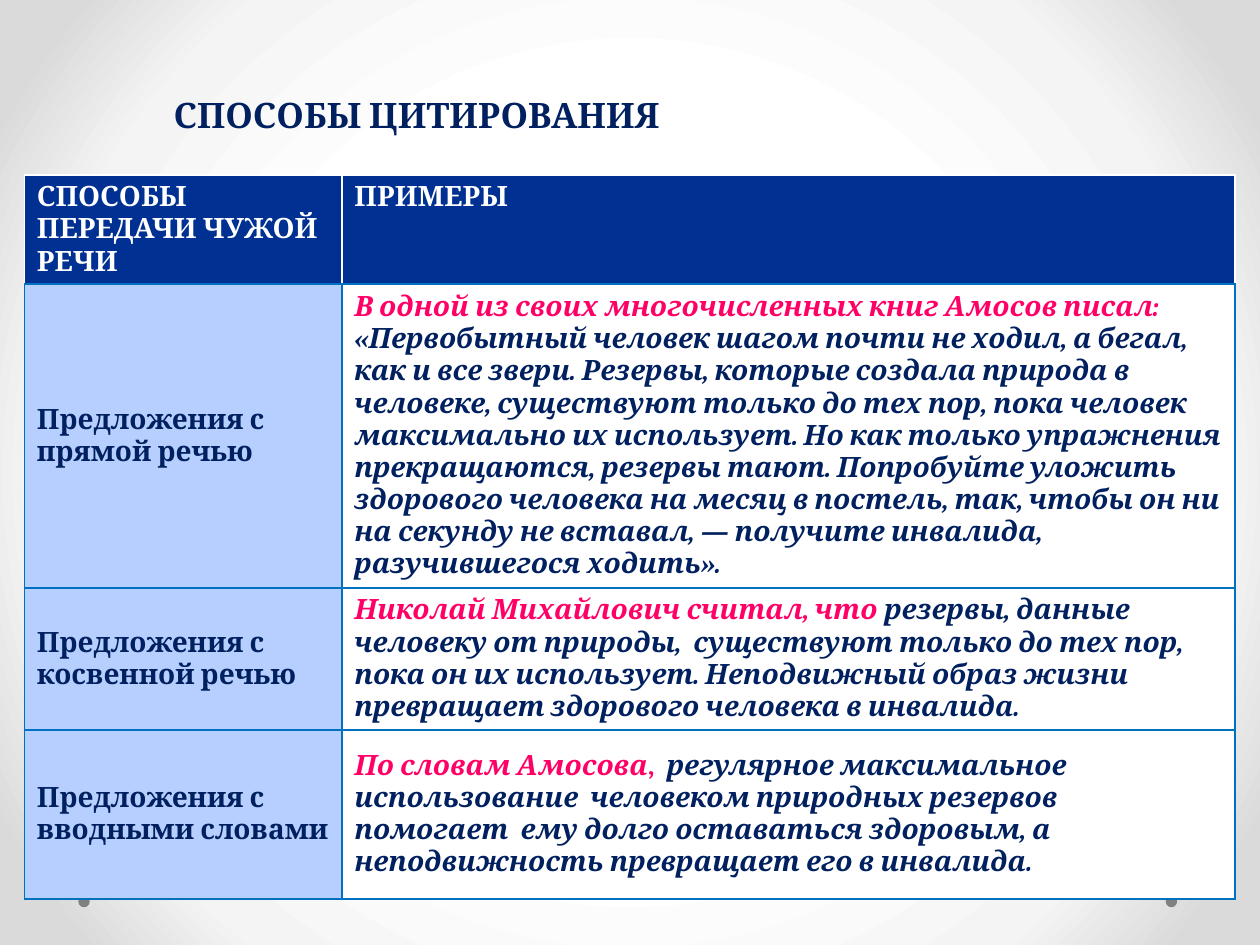
from dataclasses import dataclass

from lxml import etree
from pptx import Presentation
from pptx.dml.color import RGBColor
from pptx.enum.shapes import MSO_SHAPE
from pptx.enum.text import MSO_ANCHOR
from pptx.oxml.ns import qn
from pptx.util import Cm, Pt

OVAL = MSO_SHAPE.OVAL
TOP, MIDDLE = MSO_ANCHOR.TOP, MSO_ANCHOR.MIDDLE


@dataclass(frozen=True)
class Theme:
    font: str = "Cambria"
    title: int = 20
    body: int = 16
    line: int = 1
    navy: str = "002060"
    pink: str = "FF0066"
    white: str = "FFFFFF"
    head: str = "003192"
    side: str = "B7CFFF"
    rule: str = "0070C0"
    dot: str = "808080"
    glow: tuple = ((50, "FFFFFF"), (76, "F4F4F4"), (92, "DADADA"))


THEME = Theme()
COLS = (6.4, 18.01)
ROWS = (2.2, 6.12, 2.87, 3.4)
HEADS = ("СПОСОБЫ ПЕРЕДАЧИ ЧУЖОЙ РЕЧИ", "ПРИМЕРЫ")
PINK = {"color": THEME.pink, "italic": True}
NAVY = {"color": THEME.navy, "italic": True}
BODY = (
    ("Предложения с прямой речью", (
        ("В одной из своих многочисленных книг Амосов писал: ", PINK),
        ("«Первобытный человек шагом почти не ходил, а бегал, как и все звери. "
         "Резервы, которые создала природа в человеке, существуют только до тех "
         "пор, пока человек максимально их использует. Но как только упражнения "
         "прекращаются, резервы тают. Попробуйте уложить здорового человека на "
         "месяц в постель, так, чтобы он ни на секунду не вставал, — получите "
         "инвалида, разучившегося ходить».", NAVY))),
    ("Предложения с косвенной речью", (
        ("Николай Михайлович считал, что ", PINK),
        ("резервы, данные человеку от природы,  существуют только до тех пор, "
         "пока он их использует. Неподвижный образ жизни превращает здорового "
         "человека в инвалида.", NAVY))),
    ("Предложения с вводными словами", (
        ("По словам Амосова", PINK),
        (",  ", {"color": THEME.pink}),
        ("регулярное максимальное  использование  человеком природных резервов  "
         "помогает  ему долго оставаться здоровым, а неподвижность превращает "
         "его в инвалида.", NAVY))),
)


def paint(fill, color):
    fill.solid()
    fill.fore_color.rgb = RGBColor.from_string(color)


def add_text(para, text, size=THEME.body, color=THEME.navy, italic=False):
    run = para.add_run()
    run.text = text
    font = run.font
    font.name, font.size = THEME.font, Pt(size)
    font.bold, font.italic = True, italic
    font.color.rgb = RGBColor.from_string(color)


def add_node(parent, tag, **attrs):
    return etree.SubElement(parent, qn(tag), attrs)


def set_glow(slide):
    """Fill the background with a round gradient from the centre."""
    fill = slide.background.fill
    fill.gradient()
    grad = slide.element.find(".//" + qn("a:gradFill"))
    for node in list(grad):
        grad.remove(node)
    stops = add_node(grad, "a:gsLst")
    for pos, color in THEME.glow:
        stop = add_node(stops, "a:gs", pos=str(pos * 1000))
        add_node(stop, "a:srgbClr", val=color)
    shade = add_node(grad, "a:path", path="circle")
    add_node(shade, "a:fillToRect", **dict.fromkeys("ltrb", "50000"))


def add_dot(slide, left):
    dot = slide.shapes.add_shape(OVAL, Cm(left), Cm(18.06), Cm(0.23), Cm(0.23))
    dot.shadow.inherit = False
    paint(dot.fill, THEME.dot)
    dot.line.fill.background()


def add_title(slide, text):
    box = slide.shapes.add_textbox(Cm(3.5), Cm(0.93), Cm(20.62), Cm(1.55))
    frame = box.text_frame
    frame.word_wrap = True
    frame.vertical_anchor = MIDDLE
    frame.margin_left = frame.margin_right = 0
    frame.margin_top = frame.margin_bottom = 0
    para = frame.paragraphs[0]
    para.line_spacing = Pt(58)
    add_text(para, text, size=THEME.title)


def set_edges(cell, edge, base):
    """Draw the left, right and top edges in one colour, the bottom in another."""
    props = cell._tc.get_or_add_tcPr()
    for side, color in zip("LRTB", (edge, edge, edge, base)):
        line = add_node(props, f"a:ln{side}", w=str(Pt(THEME.line)))
        add_node(add_node(line, "a:solidFill"), "a:srgbClr", val=color)


def fill_cell(cell, parts, fill, edge=THEME.rule, anchor=MIDDLE):
    """Fill a cell; slim margins keep the text within the row height."""
    set_edges(cell, edge, THEME.rule)
    paint(cell.fill, fill)
    cell.vertical_anchor = anchor
    cell.margin_top = Cm(0.13) if anchor == TOP else 0
    cell.margin_bottom = 0
    para = cell.text_frame.paragraphs[0]
    for text, style in parts:
        add_text(para, text, **style)


def add_grid(slide):
    frame = slide.shapes.add_table(len(ROWS), len(COLS), Cm(0.49), Cm(3.53),
                                   Cm(sum(COLS)), Cm(sum(ROWS)))
    table = frame.table
    for col, width in zip(table.columns, COLS):
        col.width = Cm(width)
    for row, height in zip(table.rows, ROWS):
        row.height = Cm(height)
    for col, text in enumerate(HEADS):
        fill_cell(table.cell(0, col), [(text, {"color": THEME.white})],
                  THEME.head, edge=THEME.white, anchor=TOP)
    for row, (name, parts) in enumerate(BODY, 1):
        fill_cell(table.cell(row, 0), [(name, {})], THEME.side)
        fill_cell(table.cell(row, 1), parts, THEME.white)


def main():
    deck = Presentation()
    deck.slide_width, deck.slide_height = Cm(25.4), Cm(19.05)
    slide = deck.slides.add_slide(deck.slide_layouts[6])
    set_glow(slide)
    for left in (23.5, 1.58):
        add_dot(slide, left)
    add_title(slide, "СПОСОБЫ ЦИТИРОВАНИЯ")
    add_grid(slide)
    deck.save("out.pptx")


if __name__ == "__main__":
    main()
